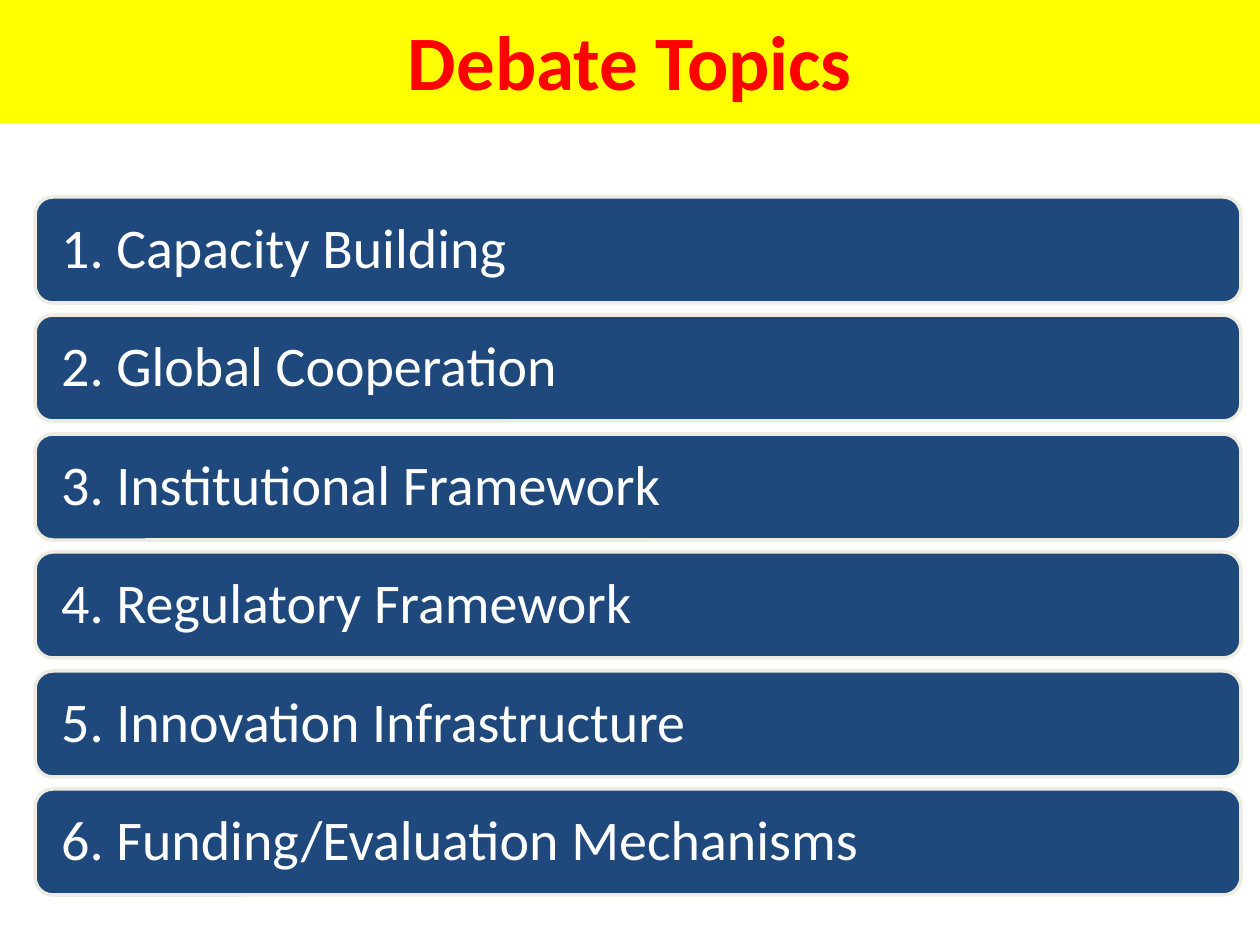
from pptx import Presentation
from pptx import util as u
from pptx.dml.color import RGBColor
from pptx.enum import shapes, text

PX = u.Inches(1) // 126
COLORS = {"band": "FFFF00", "title": "FF0000", "bar": "1F497D",
          "edge": "EEECE1", "label": "FFFFFF"}
TOPICS = ["Capacity Building", "Global Cooperation", "Institutional Framework",
          "Regulatory Framework", "Innovation Infrastructure",
          "Funding/Evaluation Mechanisms"]
FIRST_TOP, LAST_TOP = 197, 789


class Deck:
    """Holds the style and the current slide."""

    font = "Calibri"

    def __init__(self, prs):
        self.slide = prs.slides.add_slide(prs.slide_layouts[5])

    def fill(self, sp, color):
        sp.fill.solid()
        sp.fill.fore_color.rgb = RGBColor.from_string(COLORS[color])

    def label(self, sp, words, color, size, align, inset, bold=False, spacing=1.0):
        tf = sp.text_frame
        frame = {"word_wrap": True, "auto_size": text.MSO_AUTO_SIZE.NONE,
                 "vertical_anchor": text.MSO_ANCHOR.MIDDLE,
                 "margin_left": inset * PX, "margin_right": inset * PX}
        for name, value in frame.items():
            setattr(tf, name, value)
        p = tf.paragraphs[0]
        p.alignment, p.line_spacing = align, spacing
        r = p.add_run()
        r.text = words
        for name, value in {"name": self.font, "size": u.Pt(size), "bold": bold}.items():
            setattr(r.font, name, value)
        r.font.color.rgb = RGBColor.from_string(COLORS[color])

    def title(self, words, x, y, w, h):
        sp = self.slide.shapes.title
        box = {"left": x, "top": y, "width": w, "height": h}
        for name, value in box.items():
            setattr(sp, name, value * PX)
        self.fill(sp, "band")
        self.label(sp, words, "title", 44, text.PP_ALIGN.CENTER, 13, bold=True)

    def bar(self, words, x, y, w, h):
        sp = self.slide.shapes.add_shape(
            shapes.MSO_SHAPE.ROUNDED_RECTANGLE, x * PX, y * PX, w * PX, h * PX)
        sp.shadow.inherit = False
        self.fill(sp, "bar")
        sp.line.color.rgb = RGBColor.from_string(COLORS["edge"])
        sp.line.width = u.Pt(2)
        self.label(sp, words, "label", 32, text.PP_ALIGN.LEFT, 21, spacing=0.9)


def main():
    prs = Presentation()
    prs.slide_width, prs.slide_height = 1260 * PX, 945 * PX
    deck = Deck(prs)
    deck.title("Debate Topics", 0, -4, 1260, 127)
    pitch = (LAST_TOP - FIRST_TOP) / (len(TOPICS) - 1)
    for i, topic in enumerate(TOPICS):
        deck.bar(f"{i + 1}. {topic}", 35, FIRST_TOP + round(i * pitch), 1206, 106)
    prs.save("out.pptx")


if __name__ == "__main__":
    main()
